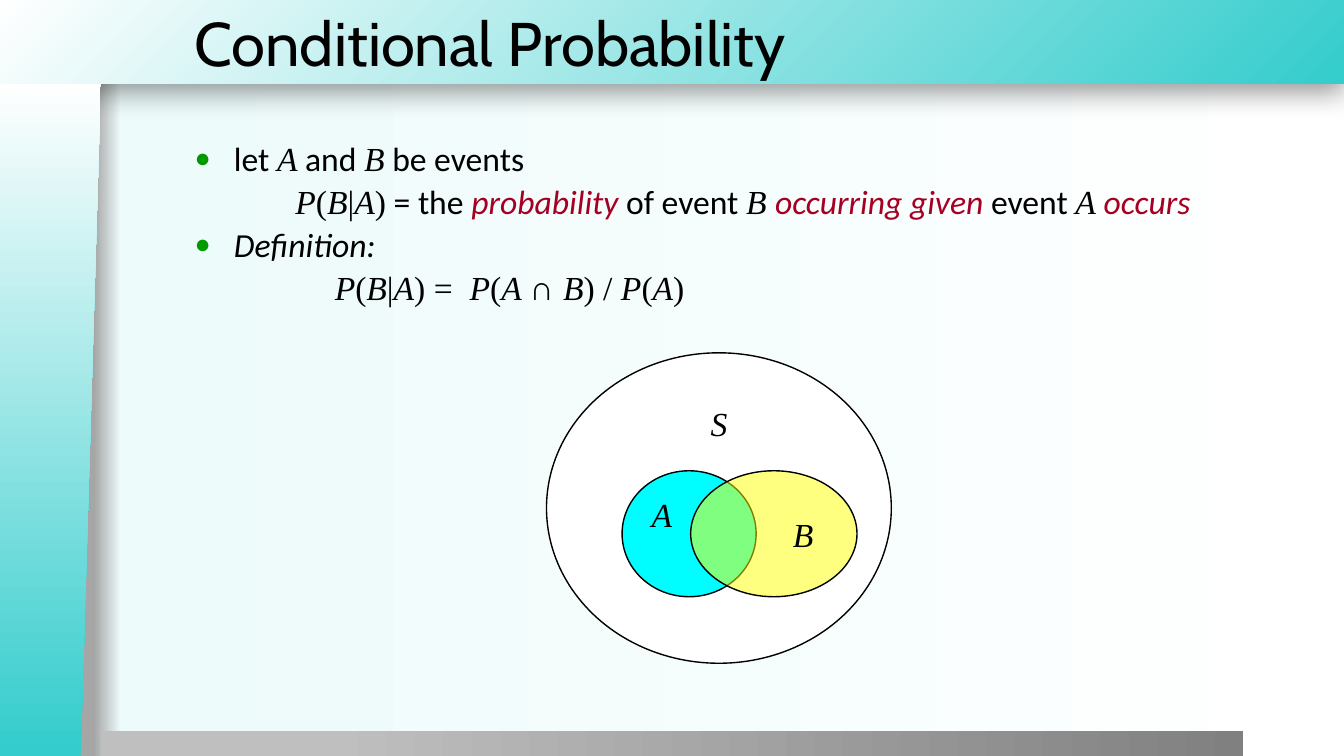
import pptx
import pptx.util
import pptx.dml.color
import pptx.enum.shapes
import pptx.enum.text
import pptx.oxml
import pptx.oxml.ns
import pptx.oxml.xmlchemy

Inches = pptx.util.Inches
Pt = pptx.util.Pt
RGBColor = pptx.dml.color.RGBColor
SHAPE = pptx.enum.shapes.MSO_SHAPE
ANCHOR = pptx.enum.text.MSO_ANCHOR
ALIGN = pptx.enum.text.PP_ALIGN
qn = pptx.oxml.ns.qn

BLACK = RGBColor(0x00, 0x00, 0x00)
WHITE = RGBColor(0xFF, 0xFF, 0xFF)
TEAL = RGBColor(0x34, 0xCC, 0xCC)
PALE_TEAL = RGBColor(0xED, 0xFB, 0xFB)
EDGE_GREY = RGBColor(0xA6, 0xA6, 0xA6)
LIGHT_GREY = RGBColor(0xBF, 0xBF, 0xBF)
DARK_GREY = RGBColor(0x80, 0x80, 0x80)
BULLET_GREEN = RGBColor(0x00, 0x99, 0x00)
CRIMSON = RGBColor(0xA5, 0x00, 0x21)
CYAN = RGBColor(0x00, 0xFD, 0xFF)
YELLOW = RGBColor(0xFF, 0xFF, 0x00)

# Run styles: font, italic, colour
WORD = ("Calibri", False, BLACK)
TERM = ("Calibri", True, BLACK)
KEY = ("Calibri", True, CRIMSON)
MATH = ("Times New Roman", False, BLACK)
VAR = ("Times New Roman", True, BLACK)
SIGN = ("Arial", False, BLACK)

P_B_GIVEN_A = [("P", VAR), ("(", MATH), ("B", VAR), ("|", MATH), ("A", VAR)]
# Each line: left margin in inches, bulleted, runs
LINES = [
    (0.39, True, [("let ", WORD), ("A", VAR), (" and ", WORD), ("B", VAR),
                  (" be events", WORD)]),
    (1, False, P_B_GIVEN_A + [
        (")", MATH), (" = the ", WORD), ("probability", KEY),
        (" of event ", WORD), ("B ", VAR), ("occurring given", KEY),
        (" event ", WORD), ("A ", VAR), ("occurs", KEY)]),
    (0.39, True, [("Definition:", TERM)]),
    (1.39, False, P_B_GIVEN_A + [
        (") =  ", MATH), ("P", VAR), ("(", MATH), ("A ", VAR), ("∩ ", SIGN),
        ("B", VAR), (") / ", MATH), ("P", VAR), ("(", MATH), ("A", VAR),
        (")", MATH)]),
]


def add_child(parent, tag, **attributes):
    child = pptx.oxml.xmlchemy.OxmlElement(tag)
    for key, value in attributes.items():
        child.set(key, str(value))
    parent.append(child)
    return child


def paint_gradient(fill, owner, stops):
    """Fill with a left-to-right gradient of (percent, colour) stops."""
    fill.gradient()
    fill.gradient_angle = 0
    gradient = owner.find(".//" + qn("a:gradFill"))
    stop_list = gradient.find(qn("a:gsLst"))
    for default_stop in list(stop_list):
        stop_list.remove(default_stop)
    for percent, color in stops:
        stop = add_child(stop_list, "a:gs", pos=percent * 1000)
        add_child(stop, "a:srgbClr", val=color)
    return gradient


def place(shape, box):
    shape.left, shape.top, shape.width, shape.height = map(Inches, box)


def add_panel(slide, preset, box, stops):
    panel = slide.shapes.add_shape(preset, *map(Inches, box))
    panel.shadow.inherit = False
    panel.line.fill.background()
    gradient = paint_gradient(panel.fill, panel.element, stops)
    return panel, gradient


def add_run(paragraph, text, style, size=24):
    run = paragraph.add_run()
    run.text = text
    run.font.size = Pt(size)
    run.font.name, run.font.italic, run.font.color.rgb = style


def draw_frame(slide, box):
    left, top, width, height = box
    header_height, side_width, footer_height = 0.83, 1, 0.25
    paint_gradient(slide.background.fill, slide.element,
                   [(7, EDGE_GREY), (9, PALE_TEAL), (100, WHITE)])

    # Header band: gradient spreads from the lower right corner
    header, gradient = add_panel(slide, SHAPE.RECTANGLE,
                                 (left, top, width, header_height),
                                 [(0, TEAL), (100, WHITE)])
    gradient.remove(gradient.find(qn("a:lin")))
    spread = add_child(gradient, "a:path", path="circle")
    add_child(spread, "a:fillToRect", l=100000, t=100000)
    effects = header.element.spPr.find(qn("a:effectLst"))
    shadow = add_child(effects, "a:outerShdw", blurRad=Pt(20), dist=Pt(6),
                       dir=5400000, algn="t", rotWithShape=0)
    add_child(add_child(shadow, "a:srgbClr", val=BLACK), "a:alpha", val=40000)

    # Footer bar
    add_panel(slide, SHAPE.RECTANGLE,
              (left + side_width, top + height - footer_height,
               width - 2 * side_width, footer_height),
              [(20, LIGHT_GREY), (100, DARK_GREY)])

    # Slanted side panel, standing on its end
    length = height - header_height
    side, _ = add_panel(slide, SHAPE.FLOWCHART_MANUAL_INPUT,
                        (left + (side_width - length) / 2,
                         top + header_height + (length - side_width) / 2,
                         length, side_width),
                        [(1, TEAL), (100, WHITE)])
    side.rotation = 270
    side.element.spPr.find(qn("a:xfrm")).set("flipV", "1")


def write_title(slide, box):
    title = slide.shapes.title
    slide.shapes.element.append(title.element)  # bring in front of the header
    place(title, box)
    frame = title.text_frame
    frame.auto_size = pptx.enum.text.MSO_AUTO_SIZE.NONE
    frame.vertical_anchor = ANCHOR.MIDDLE
    paragraph = frame.paragraphs[0]
    paragraph.alignment = ALIGN.LEFT
    add_run(paragraph, "Conditional Probability", ("Cabin", False, BLACK), 44)


def write_definition(slide, box):
    body = slide.placeholders[1]
    slide.shapes.element.append(body.element)
    place(body, box)
    frame = body.text_frame
    frame.auto_size = pptx.enum.text.MSO_AUTO_SIZE.NONE
    for index, (margin, bulleted, runs) in enumerate(LINES):
        paragraph = frame.add_paragraph() if index else frame.paragraphs[0]
        paragraph.line_spacing = 0.9
        paragraph.space_before = Pt(4.8)
        properties = paragraph._p.get_or_add_pPr()
        properties.set("marL", str(Inches(margin)))
        properties.set("indent", str(Inches(-margin if bulleted else 0)))
        if bulleted:
            color = add_child(properties, "a:buClr")
            add_child(color, "a:srgbClr", val=BULLET_GREEN)
            add_child(properties, "a:buSzPct", val=80000)
            add_child(properties, "a:buChar", char="●")
        else:
            add_child(properties, "a:buNone")
        for text, style in runs:
            add_run(paragraph, text, style)


def add_event(diagram, name, box, color, align, anchor):
    event = diagram.shapes.add_shape(SHAPE.OVAL, *map(Inches, box))
    event.shadow.inherit = False
    event.fill.solid()
    event.fill.fore_color.rgb = color
    event.line.color.rgb = BLACK
    event.line.width = Pt(1)
    event.text_frame.vertical_anchor = anchor
    paragraph = event.text_frame.paragraphs[0]
    paragraph.alignment = align
    add_run(paragraph, name, VAR)
    return event


def draw_venn(slide, box):
    left, top, width, height = box
    event_top, event_height = top + 1.17, 1.25
    diagram = slide.shapes.add_group_shape()
    add_event(diagram, "S", box, WHITE, ALIGN.CENTER, ANCHOR.TOP)
    add_event(diagram, "A", (left + 0.75, event_top, 1.33, event_height),
              CYAN, ALIGN.LEFT, ANCHOR.TOP)
    event_b = add_event(diagram, "B",
                        (left + 1.43, event_top, 1.65, event_height),
                        YELLOW, ALIGN.CENTER, ANCHOR.MIDDLE)
    event_b.text_frame.margin_left = Inches(0.68)  # keep B off the overlap
    fill_color = event_b.element.spPr.find(qn("a:solidFill"))[0]
    add_child(fill_color, "a:alpha", val=50000)


def main():
    deck = pptx.Presentation()
    deck.slide_width, deck.slide_height = Inches(13.33), Inches(7.5)
    slide = deck.slides.add_slide(deck.slide_layouts[1])
    draw_frame(slide, (0, 0, 13.33, 7.5))
    write_title(slide, (1.83, 0, 11.5, 0.83))
    write_definition(slide, (1.83, 1.36, 10.5, 5.79))
    draw_venn(slide, (5.42, 3.5, 3.42, 3.08))
    deck.save("out.pptx")


if __name__ == "__main__":
    main()
